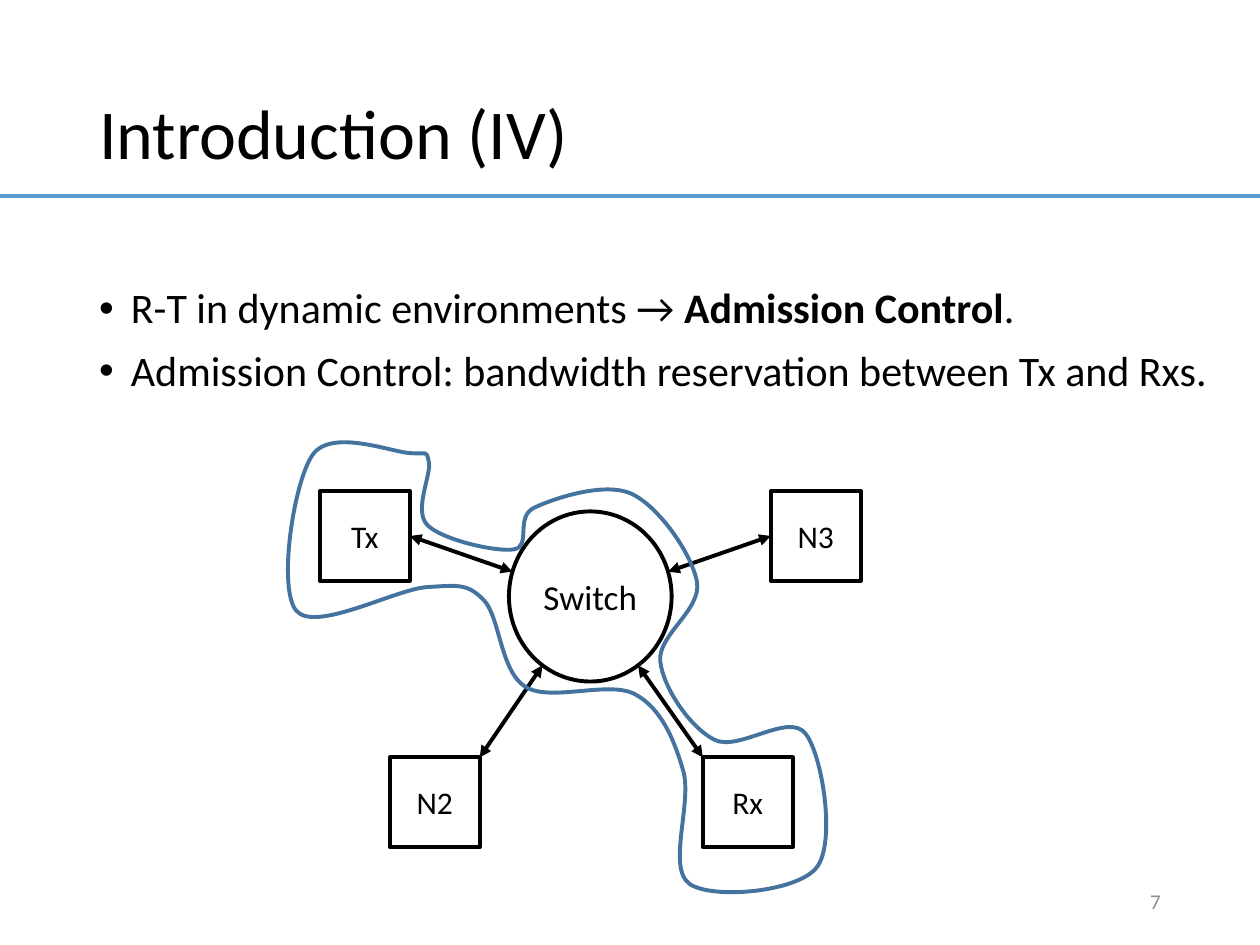
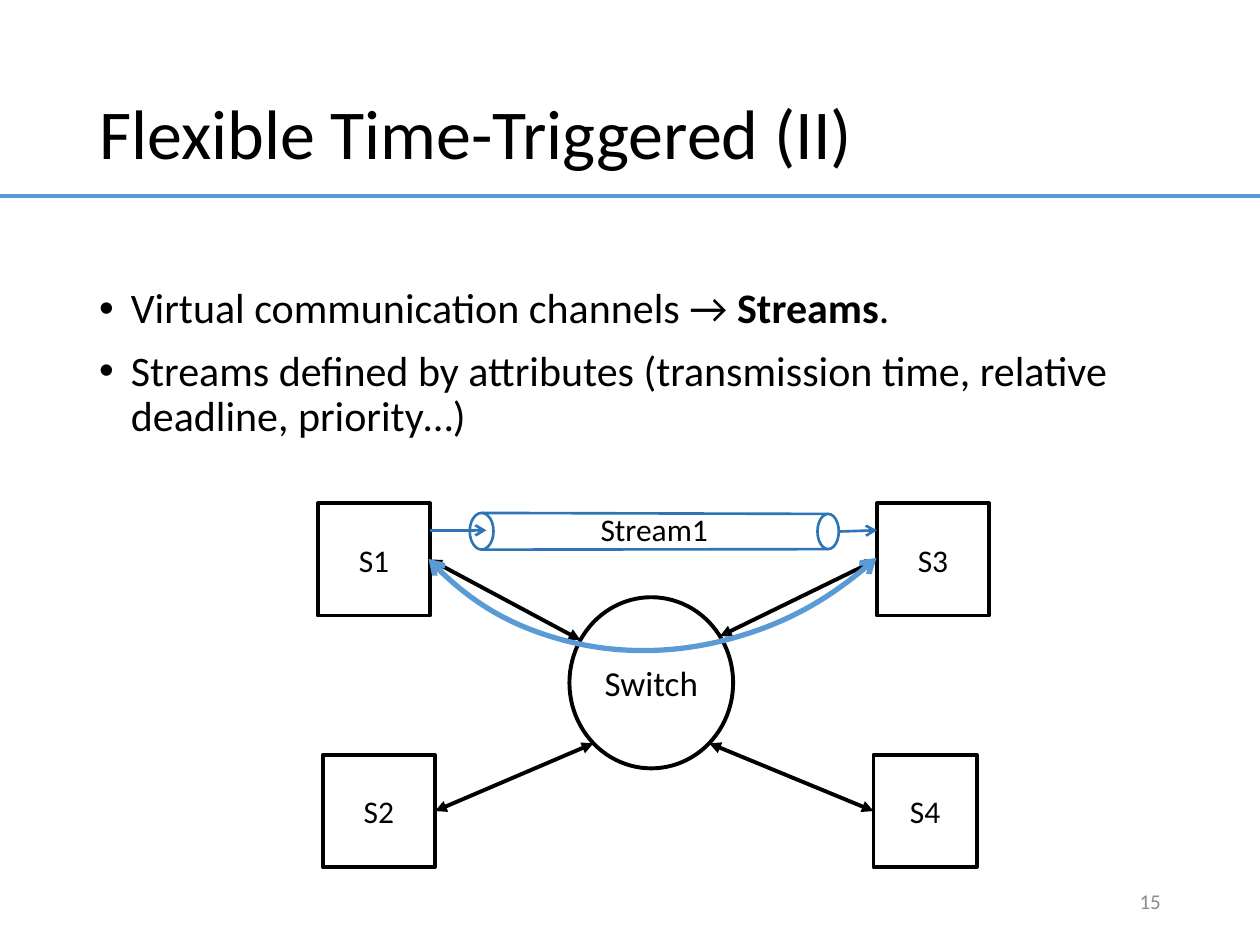
from dataclasses import dataclass
from math import cos, radians, sin
from typing import NamedTuple

from lxml.etree import SubElement
from pptx import Presentation
from pptx.dml.color import RGBColor
from pptx.enum.shapes import MSO_CONNECTOR as Connector, MSO_SHAPE as Preset
from pptx.enum.text import MSO_ANCHOR as Anchor, PP_ALIGN as Align
from pptx.oxml.ns import qn
from pptx.util import Cm, Pt

FONT = "Calibri"
BLACK, GREY = "000000", "8C8C8C"
ACCENT, STREAM_BLUE, OUTLINE_BLUE = "5B9BD5", "2E75B6", "43739E"
THIN, MEDIUM, THICK = 1.5, 2.25, 3
SLIDE_WIDTH, SLIDE_HEIGHT = 25.4, 19.05


class Point(NamedTuple):
    """A position or an offset in centimetres."""
    x: float
    y: float

    def plus(self, other: "Point", share: float = 1) -> "Point":
        return Point(self.x + share * other.x, self.y + share * other.y)


class Box(NamedTuple):
    """Left, top, width and height in centimetres."""
    left: float
    top: float
    width: float
    height: float

    def at(self, across: float, down: float) -> Point:
        """Return the point at the given fractions of width and height."""
        return Point(self.left + across * self.width, self.top + down * self.height)

    def rim(self, degrees: float) -> Point:
        """Return the point of the inscribed ellipse, clockwise from the right."""
        angle = radians(degrees)
        return self.at(0.5 + cos(angle) / 2, 0.5 + sin(angle) / 2)

    def lengths(self) -> list[Cm]:
        return [Cm(value) for value in self]


class Run(NamedTuple):
    text: str
    bold: bool = False


@dataclass(frozen=True)
class Node:
    """A station; its link runs from port to the switch rim at rim_angle."""
    label: str
    box: Box
    port: tuple[float, float]
    rim_angle: float


@dataclass(frozen=True)
class Page:
    title: str
    number: int
    body: Box
    bullets: list[list[Run]]
    switch: Box
    nodes: list[Node]


@dataclass(frozen=True)
class Leg:
    """Part of the reservation outline: offsets from the centre of one shape."""
    around: Box
    offsets: list[tuple[float, float]]


TITLE_BOX = Box(1.75, 0.84, 21.9, 3.84)
NUMBER_BOX = Box(17.93, 17.65, 5.72, 1.02)
RULE_Y = 3.96
LEFT_SIDE, RIGHT_SIDE = (0, 0.5), (1, 0.5)
TOP_LEFT, TOP_RIGHT = (0, 0), (1, 0)

STATION = 1.81
UPPER_ROW, LOWER_ROW = 9.9, 15.27
SWITCH = Box(10.26, 10.31, 3.28, 3.43)
TX = Node("Tx", Box(6.45, UPPER_ROW, STATION, STATION), RIGHT_SIDE, 197)
N3 = Node("N3", Box(15.54, UPPER_ROW, STATION, STATION), LEFT_SIDE, -17)
N2 = Node("N2", Box(7.86, LOWER_ROW, STATION, STATION), TOP_RIGHT, 126)
RX = Node("Rx", Box(14.17, LOWER_ROW, STATION, STATION), TOP_LEFT, 54)

SERVER = 2.26
SERVER_TOP, SERVER_BOTTOM = 10.15, 15.22
S1 = Node("S1", Box(6.41, SERVER_TOP, SERVER, SERVER), RIGHT_SIDE, 210)
S2 = Node("S2", Box(6.51, SERVER_BOTTOM, SERVER, SERVER), RIGHT_SIDE, 135)
S3 = Node("S3", Box(17.68, SERVER_TOP, SERVER, SERVER), LEFT_SIDE, -33)
S4 = Node("S4", Box(17.61, SERVER_BOTTOM, 2.08, SERVER), LEFT_SIDE, 45)

ADMISSION = Page(
    "Introduction (IV)", 7, Box(1.75, 5.67, 23.06, 2.49),
    [
        [Run("R-T in dynamic environments → "), Run("Admission Control", True), Run(".")],
        [Run("Admission Control: bandwidth reservation between Tx and Rxs.")],
    ],
    SWITCH, [N3, RX, N2, TX],
)
STREAMS = Page(
    "Flexible Time-Triggered (II)", 15, Box(1.75, 5.67, 22.4, 3.38),
    [
        [Run("Virtual communication channels → "), Run("Streams", True), Run(".")],
        [Run("Streams defined by attributes (transmission time, relative "
             "deadline, priority…)")],
    ],
    Box(11.48, 12.04, 3.3, 3.45), [S3, S4, S2, S1],
)

# The outline runs round Tx, under the switch, round Rx and back over the switch.
RESERVATION = [
    Leg(TX.box, [(0.91, -1.67), (-1.05, -1.64), (-1.38, 1.51), (1.26, 1.03)]),
    Leg(SWITCH, [(-2.15, 0.07), (-1.31, 1.82), (0.9, 1.97)]),
    Leg(RX.box, [(-1.3, -0.63), (-1.18, 1.64), (1.39, 1.31), (1.16, -1.39), (-0.67, -1.26)]),
    Leg(SWITCH, [(1.41, 1.31), (2.15, -0.29), (0.83, -2.07), (-1.13, -1.79), (-1.54, -0.95)]),
    Leg(TX.box, [(1.26, -0.22), (1.29, -1.49)]),
]

TUBE_LEFT = Box(9.47, 10.34, 0.48, 0.74)
TUBE_RIGHT = Box(16.48, 10.36, 0.43, 0.71)
TUBE_LABEL = Box(9.47, 10.16, 7.44, 1.02)
STREAM_Y = 10.69
ROUTE_BOX = Box(6.88, 0.66, 13.39, 12.17)


def rgb(color: str) -> RGBColor:
    return RGBColor.from_string(color)


def style_line(shape, color: str, width: float, head: str = "", tail: str = "") -> None:
    shape.line.color.rgb = rgb(color)
    shape.line.width = Pt(width)
    for tag, kind in (("a:headEnd", head), ("a:tailEnd", tail)):
        if kind:
            SubElement(shape.line._get_or_add_ln(), qn(tag), type=kind)


def style_outline(shape, color: str, width: float, head: str = "", tail: str = "") -> None:
    """Leave only the line of a shape visible."""
    shape.shadow.inherit = False
    shape.fill.background()
    style_line(shape, color, width, head, tail)


def add_line(slide, start: Point, end: Point, color: str, width: float,
             head: str = "", tail: str = "") -> None:
    ends = [Cm(value) for value in (*start, *end)]
    connector = slide.shapes.add_connector(Connector.STRAIGHT, *ends)
    style_line(connector, color, width, head, tail)
    SubElement(connector._element.spPr, qn("a:effectLst"))


def add_outline(slide, preset: Preset, box: Box, color: str, width: float,
                head: str = "", tail: str = ""):
    shape = slide.shapes.add_shape(preset, *box.lengths())
    style_outline(shape, color, width, head, tail)
    return shape


def add_run(paragraph, run: Run, size: float, color: str = BLACK) -> None:
    text_run = paragraph.add_run()
    text_run.text = run.text
    font = text_run.font
    font.name, font.size, font.bold = FONT, Pt(size), run.bold
    font.color.rgb = rgb(color)


def write_label(shape, text: str, size: float, color: str = BLACK,
                align: Align = Align.CENTER, wrap: bool = True):
    """Write one vertically centred paragraph and return it."""
    frame = shape.text_frame
    frame.word_wrap = wrap
    frame.vertical_anchor = Anchor.MIDDLE
    paragraph = frame.paragraphs[0]
    paragraph.alignment = align
    add_run(paragraph, Run(text), size, color)
    return paragraph


def add_bullets(slide, box: Box, bullets: list[list[Run]]) -> None:
    frame = slide.shapes.add_textbox(*box.lengths()).text_frame
    frame.word_wrap = True
    indent = Cm(0.64)
    for index, runs in enumerate(bullets):
        paragraph = frame.add_paragraph() if index else frame.paragraphs[0]
        paragraph.line_spacing = 0.9
        paragraph.space_before = Pt(10)
        properties = paragraph._p.get_or_add_pPr()
        properties.set("marL", str(indent))
        properties.set("indent", str(-indent))
        SubElement(properties, qn("a:buFont"), typeface="Arial")
        SubElement(properties, qn("a:buChar"), char="•")
        for run in runs:
            add_run(paragraph, run, 24)


def add_network(slide, switch: Box, nodes: list[Node]) -> None:
    for node in nodes:
        add_line(slide, node.box.at(*node.port), switch.rim(node.rim_angle),
                 BLACK, MEDIUM, "triangle", "triangle")
        square = add_outline(slide, Preset.RECTANGLE, node.box, BLACK, MEDIUM)
        write_label(square, node.label, 18, wrap=False)
    circle = add_outline(slide, Preset.OVAL, switch, BLACK, MEDIUM)
    write_label(circle, "Switch", 20, wrap=False)


def add_page(presentation, page: Page):
    slide = presentation.slides.add_slide(presentation.slide_layouts[6])
    add_line(slide, Point(0, RULE_Y), Point(SLIDE_WIDTH, RULE_Y), ACCENT, MEDIUM)
    title = slide.shapes.add_textbox(*TITLE_BOX.lengths())
    write_label(title, page.title, 40, align=Align.LEFT).line_spacing = 0.9
    add_bullets(slide, page.body, page.bullets)
    number = slide.shapes.add_textbox(*NUMBER_BOX.lengths())
    write_label(number, str(page.number), 12, GREY, Align.RIGHT)
    add_network(slide, page.switch, page.nodes)
    return slide


def smooth_curves(knots: list[Point]) -> list[Point]:
    """Return three Bézier points per curve of a closed Catmull-Rom spline.

    The handles at a knot are a sixth of the step from its previous to its next knot.
    """
    following = knots[1:] + knots[:1]
    previous = knots[-1:] + knots[:-1]
    steps = [after.plus(before, -1) for before, after in zip(previous, following)]
    points = []
    for knot, step, target, target_step in zip(
            knots, steps, following, steps[1:] + steps[:1]):
        points += [knot.plus(step, 1 / 6), target.plus(target_step, -1 / 6), target]
    return points


def add_closed_curve(slide, knots: list[Point], color: str, width: float) -> None:
    start, *points = [(Cm(x), Cm(y)) for x, y in [knots[0], *smooth_curves(knots)]]
    builder = slide.shapes.build_freeform(*start)
    builder.add_line_segments(points, close=True)
    curve = builder.convert_to_shape()
    style_outline(curve, color, width)
    # Each run of three straight segments becomes one Bézier curve.
    segments = list(curve._element.iter(qn("a:lnTo")))
    for first, second, third in zip(segments[::3], segments[1::3], segments[2::3]):
        first.tag = qn("a:cubicBezTo")
        for segment in (second, third):
            first.append(segment[0])
            segment.getparent().remove(segment)


def add_reservation(slide) -> None:
    """Enclose the reserved route from Tx to Rx."""
    knots = [leg.around.at(0.5, 0.5).plus(Point(*offset))
             for leg in RESERVATION for offset in leg.offsets]
    add_closed_curve(slide, knots, OUTLINE_BLUE, MEDIUM)


def add_stream(slide) -> None:
    """Draw the Stream1 tube between S1 and S3, and its route through the switch."""
    for tube_end in (TUBE_LEFT, TUBE_RIGHT):
        add_outline(slide, Preset.OVAL, tube_end, STREAM_BLUE, THIN)
    for edge in (0, 1):
        add_line(slide, TUBE_LEFT.at(0.5, edge), TUBE_RIGHT.at(0.5, edge), STREAM_BLUE, THIN)
    sender_x, receiver_x = S1.box.at(*S1.port).x, S3.box.at(*S3.port).x
    inside_tube_x = TUBE_LEFT.at(0.7, 0).x
    for start, end in (
        (Point(sender_x, STREAM_Y), Point(inside_tube_x, STREAM_Y)),
        (TUBE_RIGHT.at(*RIGHT_SIDE), Point(receiver_x, STREAM_Y)),
    ):
        add_line(slide, start, end, STREAM_BLUE, THIN, tail="arrow")
    write_label(slide.shapes.add_textbox(*TUBE_LABEL.lengths()), "Stream1", 18)
    route = add_outline(slide, Preset.ARC, ROUTE_BOX, ACCENT, THICK, "arrow", "arrow")
    route.adjustments[0], route.adjustments[1] = 162.13, 0
    route.rotation = 137.5


def main() -> None:
    presentation = Presentation()
    presentation.slide_width = Cm(SLIDE_WIDTH)
    presentation.slide_height = Cm(SLIDE_HEIGHT)
    add_reservation(add_page(presentation, ADMISSION))
    add_stream(add_page(presentation, STREAMS))
    presentation.save("out.pptx")


if __name__ == "__main__":
    main()
